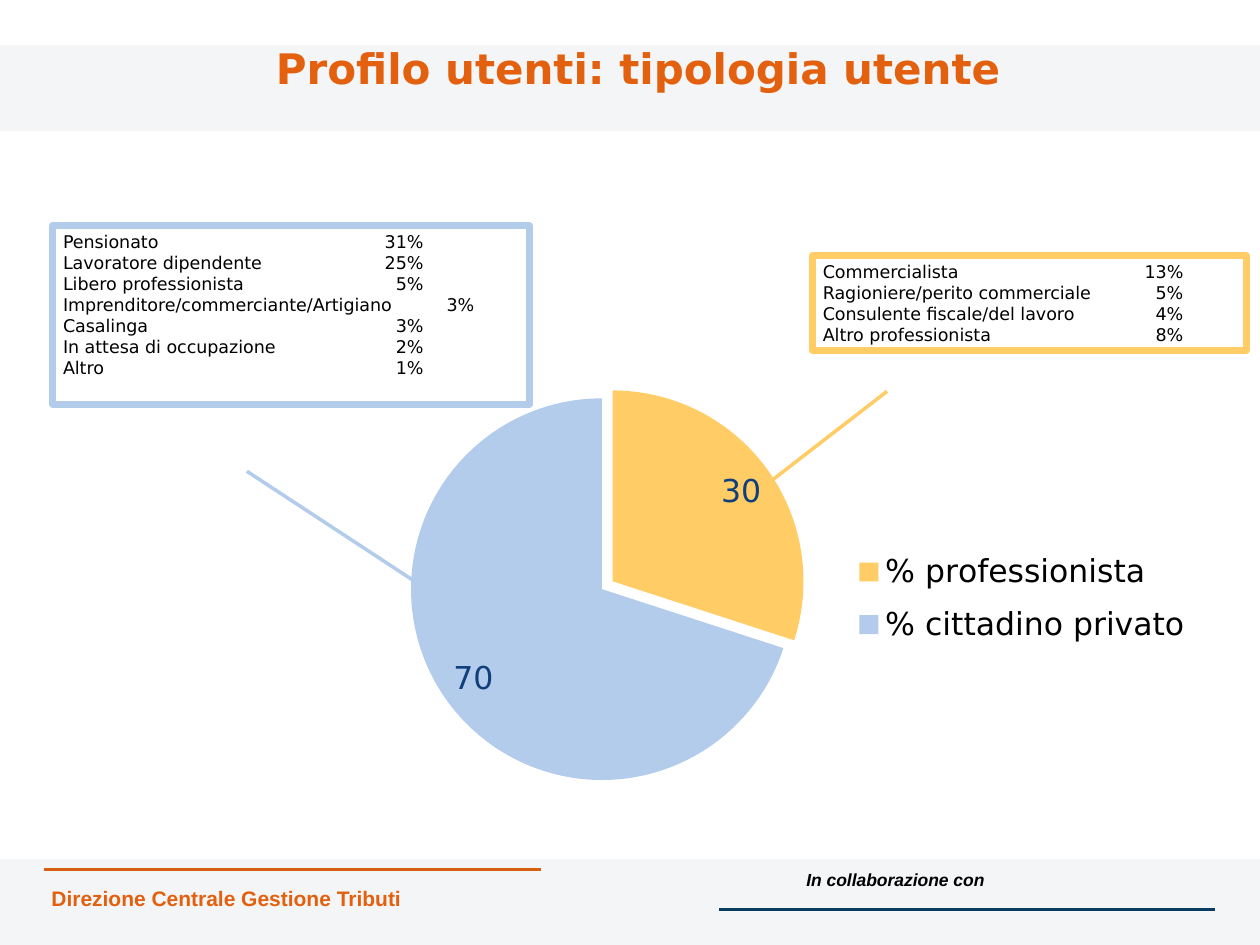
from pptx import Presentation
from pptx.chart.data import CategoryChartData
from pptx.dml.color import RGBColor
from pptx.enum.chart import XL_CHART_TYPE, XL_LABEL_POSITION, XL_LEGEND_POSITION
from pptx.enum.shapes import MSO_CONNECTOR, MSO_SHAPE
from pptx.enum.text import MSO_ANCHOR, PP_ALIGN
from pptx.oxml import parse_xml
from pptx.oxml.ns import nsdecls, qn
from pptx.util import Pt
from lxml import etree

# Content
TITLE = "Profilo utenti: tipologia utente"
DEPARTMENT = "Direzione Centrale Gestione Tributi"
PARTNER = "In collaborazione con"
SHARES = [("% professionista", 30, "yellow"), ("% cittadino privato", 70, "blue")]
VALUE_TAB, WIDE_TAB = 206, 235  # right-aligned tab stops for the percentages
PROFESSIONALS = [
    ("Commercialista", "13%", VALUE_TAB),
    ("Ragioniere/perito commerciale", "5%", VALUE_TAB),
    ("Consulente fiscale/del lavoro", "4%", VALUE_TAB),
    ("Altro professionista", "8%", VALUE_TAB),
]
CITIZENS = [
    ("Pensionato", "31%", VALUE_TAB),
    ("Lavoratore dipendente", "25%", VALUE_TAB),
    ("Libero professionista", "5%", VALUE_TAB),
    ("Imprenditore/commerciante/Artigiano", "3%", WIDE_TAB),
    ("Casalinga", "3%", VALUE_TAB),
    ("In attesa di occupazione", "2%", VALUE_TAB),
    ("Altro", "1%", VALUE_TAB),
]
# Left, top, width, height of each box; start and end of its leader line
BREAKDOWNS = [
    (PROFESSIONALS, "yellow", (464.4, 146.2, 247.7, 54), (438.5, 276.5, 506.9, 223.6)),
    (CITIZENS, "blue", (30.2, 128.9, 272.2, 102.2), (277.2, 358.6, 141.1, 269.3)),
]
RULES = [("orange", (25.2, 496.8, 308.9, 496.8)), ("navy", (411.1, 519.8, 694.1, 519.8))]
BAND_TOPS = [491, 25.9]
COLORS = {"orange": "E3600F", "navy": "073C62", "band": "1E3D5C", "yellow": "FFCC66",
          "blue": "B3CCEB", "label": "0F407B", "black": "000000"}
HEADING_FONT, FOOTER_FONT = "DejaVu Sans", "Arial"


def rgb(name):
    return RGBColor.from_string(COLORS[name])


def points(values):
    return [Pt(value) for value in values]


def set_font(font, name, size, color, bold=False, italic=False):
    font.name, font.size, font.bold, font.italic = name, Pt(size), bold, italic
    font.color.rgb = rgb(color)


def add_line(ends, color):
    line = slide.shapes.add_connector(MSO_CONNECTOR.STRAIGHT, *points(ends))
    line.line.color.rgb = rgb(color)
    line.line.width = Pt(2)
    etree.SubElement(line._element.spPr, qn("a:effectLst"))


def add_band(top):
    band = slide.shapes.add_shape(MSO_SHAPE.RECTANGLE, *points((0, top, 720, 49)))
    band.shadow.inherit = False
    band.line.fill.background()
    band.fill.solid()
    band.fill.fore_color.rgb = rgb("band")
    tint = band._element.spPr.find(qn("a:solidFill"))[0]
    etree.SubElement(tint, qn("a:alpha"), val="5000")


def add_label(text, box, size, color, align, italic=False):
    label = slide.shapes.add_textbox(*points(box)).text_frame
    label.word_wrap = True
    label.text = text
    label.paragraphs[0].alignment = align
    set_font(label.paragraphs[0].font, FOOTER_FONT, size, color, True, italic)


def add_breakdown(rows, color, box):
    frame = slide.shapes.add_shape(MSO_SHAPE.RECTANGLE, *points(box))
    frame.shadow.inherit = False
    frame.fill.background()
    frame.line.color.rgb = rgb(color)
    frame.line.width = Pt(4)
    etree.SubElement(frame.line._ln, qn("a:round"))
    body = frame.text_frame
    body.word_wrap = True
    body.vertical_anchor = MSO_ANCHOR.TOP
    body.margin_left = body.margin_right = Pt(5.8)
    body.margin_top = body.margin_bottom = Pt(2.9)
    body.text = "\n".join(f"{kind}\t{share}" for kind, share, _ in rows)
    for paragraph, (_, _, tab) in zip(body.paragraphs, rows):
        paragraph.alignment = PP_ALIGN.LEFT
        tabs = etree.SubElement(paragraph._p.get_or_add_pPr(), qn("a:tabLst"))
        etree.SubElement(tabs, qn("a:tab"), pos=str(Pt(tab)), algn="r")
        set_font(paragraph.font, HEADING_FONT, 10, "black")


def manual_layout(x, y, w, h, inner=False):
    target = '<c:layoutTarget val="inner"/>' if inner else ""
    return parse_xml(
        f'<c:layout {nsdecls("c")}><c:manualLayout>{target}'
        '<c:xMode val="edge"/><c:yMode val="edge"/>'
        f'<c:x val="{x}"/><c:y val="{y}"/><c:w val="{w}"/><c:h val="{h}"/>'
        "</c:manualLayout></c:layout>")


def add_pie():
    data = CategoryChartData(number_format="#,##0")
    data.categories = [name for name, _, _ in SHARES]
    data.add_series("Series 1", [value for _, value, _ in SHARES])
    chart = slide.shapes.add_chart(
        XL_CHART_TYPE.PIE, *points((209.5, 158.4, 480.2, 346.3)), data).chart
    chart.has_title = False
    set_font(chart.font, HEADING_FONT, 18, "black")

    # Slices, the first one pulled out
    plot = chart.plots[0]
    plot.vary_by_categories = True
    series = plot.series[0]
    for index, (_, _, color) in enumerate(SHARES):
        fill = series.points[index].format.fill
        fill.solid()
        fill.fore_color.rgb = rgb(color)
    first_slice = series._element.find(qn("c:dPt"))
    first_slice.find(qn("c:spPr")).addprevious(
        parse_xml(f'<c:explosion {nsdecls("c")} val="7"/>'))

    # Value labels
    plot.has_data_labels = True
    labels = plot.data_labels
    labels.show_value, labels.show_percentage = True, False
    labels.number_format, labels.number_format_is_linked = "#,##0", False
    labels.position = XL_LABEL_POSITION.INSIDE_END
    set_font(labels.font, HEADING_FONT, 18, "label")

    # Legend and placement
    chart.has_legend = True
    legend = chart.legend
    legend.position = XL_LEGEND_POSITION.RIGHT
    legend.include_in_layout = False
    set_font(legend.font, HEADING_FONT, 18, "black")
    for old in legend._element.findall(qn("c:layout")):
        legend._element.remove(old)
    legend._element.find(qn("c:legendPos")).addnext(manual_layout(0.58, 0.43, 0.4, 0.2))
    area = chart._chartSpace.chart.plotArea
    for old in area.findall(qn("c:layout")):
        area.remove(old)
    area.insert(0, manual_layout(0.05, 0.2, 0.46, 0.63, inner=True))


prs = Presentation()
prs.slide_width, prs.slide_height = Pt(720), Pt(540)
slide = prs.slides.add_slide(prs.slide_layouts[5])

# Rules, bands and partner line
for rule_color, rule_ends in RULES:
    add_line(rule_ends, rule_color)
for band_top in BAND_TOPS:
    add_band(band_top)
add_label(PARTNER, (435.6, 493.2, 134, 18.7), 10, "black", PP_ALIGN.RIGHT, italic=True)

# Title, in front of its band
title = slide.shapes.title
title.left, title.top, title.width, title.height = points((25.2, 13, 679, 51.1))
title.text_frame.text = TITLE
title.text_frame.vertical_anchor = MSO_ANCHOR.MIDDLE
title.text_frame.paragraphs[0].alignment = PP_ALIGN.CENTER
set_font(title.text_frame.paragraphs[0].font, HEADING_FONT, 24, "orange", True)
slide.shapes._spTree.append(title._element)

# Pie with a breakdown of each slice
add_pie()
for rows, box_color, box, leader in BREAKDOWNS:
    add_line(leader, box_color)
    add_breakdown(rows, box_color, box)

add_label(DEPARTMENT, (22.3, 502.6, 272.2, 21.6), 12, "orange", PP_ALIGN.LEFT)

prs.save("out.pptx")
